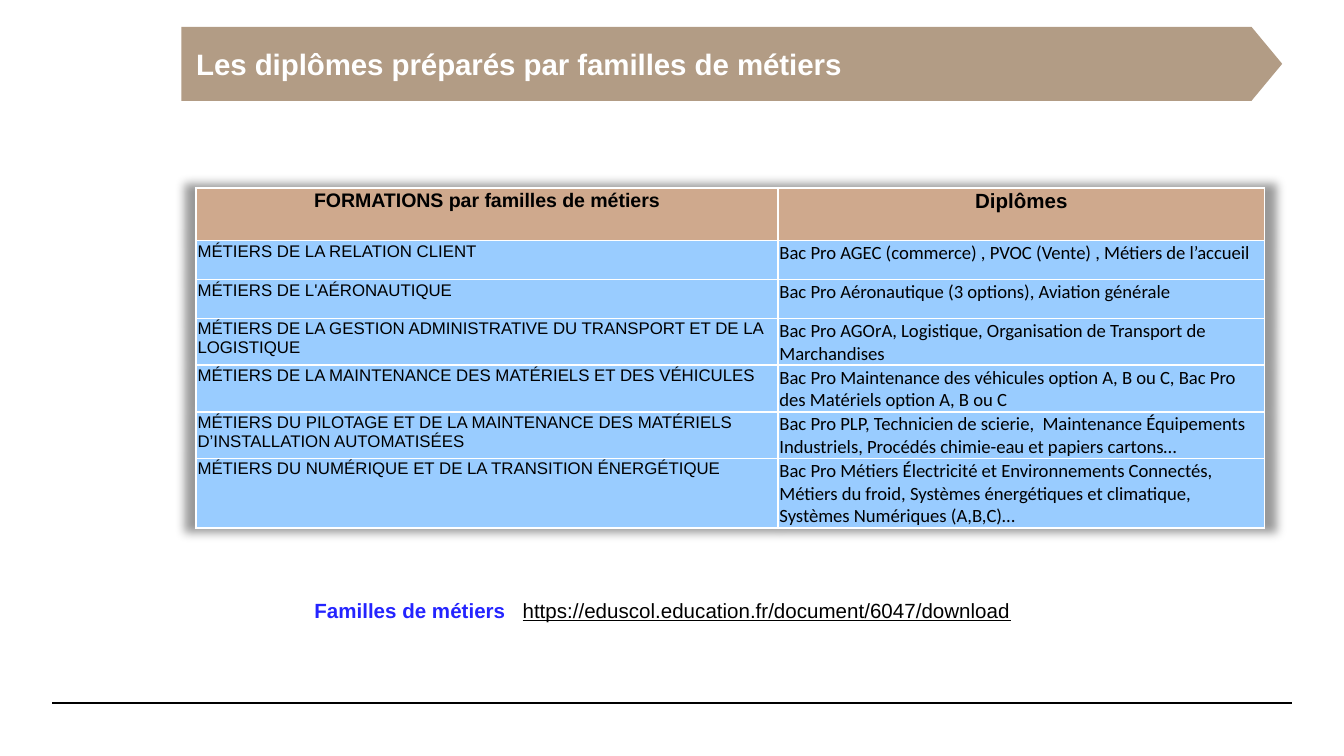
"""Build the slide listing the diplomas prepared by each family of trades."""
from typing import NamedTuple

from lxml import etree
from pptx import Presentation
from pptx.dml.color import RGBColor
from pptx.enum.shapes import MSO_CONNECTOR, MSO_SHAPE
from pptx.enum.text import MSO_ANCHOR, MSO_AUTO_SIZE, PP_ALIGN
from pptx.oxml import parse_xml
from pptx.oxml.ns import nsdecls, qn
from pptx.util import Inches, Pt

HOME_PLATE = MSO_SHAPE.PENTAGON
STRAIGHT = MSO_CONNECTOR.STRAIGHT
MIDDLE, TOP = MSO_ANCHOR.MIDDLE, MSO_ANCHOR.TOP
LEFT, CENTER = PP_ALIGN.LEFT, PP_ALIGN.CENTER
NO_FIT, GROW = MSO_AUTO_SIZE.NONE, MSO_AUTO_SIZE.SHAPE_TO_FIT_TEXT

BLACK, WHITE = "000000", "FFFFFF"
BANNER_BROWN, HEADER_TAN = "B29C85", "CFA98D"
ROW_BLUE, LABEL_BLUE = "99CCFF", "2424FF"
BANNER_BOX = [Inches(n) for n in (1.35, 0.2, 8.19, 0.55)]
COLUMN_WIDTHS = (4.33, 3.62)
HEADER_HEIGHT, ROW_HEIGHT = 0.39, 0.29


class Style(NamedTuple):
    size: float
    name: str = "Arial"
    color: str = BLACK
    bold: bool = False
    underline: bool = False


class Family(NamedTuple):
    trades: str
    diplomas: str


HEADER = Family("FORMATIONS par familles de métiers", "Diplômes")
HEADER_STYLES = (Style(10.5, bold=True), Style(11, bold=True))
ROW_STYLES = (Style(9), Style(10, "Calibri"))
FAMILIES = [
    Family("MÉTIERS DE LA RELATION CLIENT",
           "Bac Pro AGEC (commerce) , PVOC (Vente) , Métiers de l’accueil"),
    Family("MÉTIERS DE L'AÉRONAUTIQUE",
           "Bac Pro Aéronautique (3 options), Aviation générale"),
    Family("MÉTIERS DE LA GESTION ADMINISTRATIVE DU TRANSPORT ET DE LA LOGISTIQUE",
           "Bac Pro AGOrA, Logistique, Organisation de Transport de Marchandises"),
    Family("MÉTIERS DE LA MAINTENANCE DES MATÉRIELS ET DES VÉHICULES",
           "Bac Pro Maintenance des véhicules option A, B ou C, "
           "Bac Pro des Matériels option A, B ou C"),
    Family("MÉTIERS DU PILOTAGE ET DE LA MAINTENANCE DES MATÉRIELS "
           "D’INSTALLATION AUTOMATISÉES",
           "Bac Pro PLP, Technicien de scierie,  Maintenance Équipements "
           "Industriels, Procédés chimie-eau et papiers cartons…"),
    Family("MÉTIERS DU NUMÉRIQUE ET DE LA TRANSITION ÉNERGÉTIQUE",
           "Bac Pro Métiers Électricité et Environnements Connectés, Métiers du "
           "froid, Systèmes énergétiques et climatique, Systèmes Numériques (A,B,C)…"),
]


def rgb(value: str) -> RGBColor:
    return RGBColor.from_string(value)


def apply(target, formats: dict) -> None:
    for attribute, value in formats.items():
        setattr(target, attribute, value)


def write(paragraph, text: str, style: Style) -> None:
    run = paragraph.add_run()
    run.text = text
    formats = style._asdict() | {"size": Pt(style.size)}
    run.font.color.rgb = rgb(formats.pop("color"))
    apply(run.font, formats)


def draw_rule(slide) -> None:
    rule = slide.shapes.add_connector(
        STRAIGHT, Inches(0.39), Inches(5.23), Inches(9.61), Inches(5.23))
    rule.line.color.rgb = rgb(BLACK)
    rule.line.width = Pt(0.8)
    etree.SubElement(rule.element.spPr, qn("a:effectLst"))


def fill_cell(cell, text: str, style: Style, fill: str, align: PP_ALIGN) -> None:
    apply(cell, {"margin_left": Inches(0.01), "margin_right": Inches(0.01),
                 "margin_top": Inches(0.01), "margin_bottom": 0,
                 "vertical_anchor": TOP})
    entry = cell.text_frame.paragraphs[0]
    entry.alignment = align
    write(entry, text, style)
    borders = cell._tc.get_or_add_tcPr()
    for side in ("lnL", "lnR", "lnT", "lnB"):
        borders.append(parse_xml(
            f'<a:{side} {nsdecls("a")} w="{Pt(1)}"><a:solidFill>'
            f'<a:srgbClr val="{WHITE}"/></a:solidFill></a:{side}>'))
    cell.fill.solid()
    cell.fill.fore_color.rgb = rgb(fill)


def draw_table(slide) -> None:
    height = HEADER_HEIGHT + ROW_HEIGHT * len(FAMILIES)
    holder = slide.shapes.add_table(
        len(FAMILIES) + 1, len(COLUMN_WIDTHS), Inches(1.46), Inches(1.4),
        Inches(sum(COLUMN_WIDTHS)), Inches(height))
    table = holder.table
    table.first_row = table.horz_banding = False
    holder.element.find(".//" + qn("a:tblPr")).insert(0, parse_xml(
        f'<a:effectLst {nsdecls("a")}><a:outerShdw blurRad="63500" sx="102000" '
        f'sy="102000" algn="ctr" rotWithShape="0"><a:srgbClr val="{BLACK}">'
        '<a:alpha val="40000"/></a:srgbClr></a:outerShdw></a:effectLst>'))
    for column, width in zip(table.columns, COLUMN_WIDTHS):
        column.width = Inches(width)
    for index, family in enumerate([HEADER, *FAMILIES]):
        is_header = index == 0
        table.rows[index].height = Inches(HEADER_HEIGHT if is_header else ROW_HEIGHT)
        styles = HEADER_STYLES if is_header else ROW_STYLES
        fill, align = (HEADER_TAN, CENTER) if is_header else (ROW_BLUE, LEFT)
        for column, (text, style) in enumerate(zip(family, styles)):
            fill_cell(table.cell(index, column), text, style, fill, align)


def draw_banner(slide) -> None:
    banner = slide.shapes.add_shape(HOME_PLATE, *BANNER_BOX)
    banner.adjustments[0] = 0.415
    banner.shadow.inherit = False
    banner.fill.solid()
    banner.fill.fore_color.rgb = rgb(BANNER_BROWN)
    banner.line.fill.background()
    title = slide.shapes.title
    apply(title, dict(zip(("left", "top", "width", "height"), BANNER_BOX)))
    apply(title.text_frame, {"word_wrap": True, "auto_size": NO_FIT,
                             "vertical_anchor": MIDDLE,
                             "margin_left": Inches(0.11),
                             "margin_right": Inches(0.11)})
    heading = title.text_frame.paragraphs[0]
    heading.alignment = LEFT
    write(heading, "Les diplômes préparés par familles de métiers",
          Style(15.75, color=WHITE, bold=True))
    title.element.getparent().append(title.element)


def draw_source(slide) -> None:
    source = slide.shapes.add_textbox(
        Inches(2.24), Inches(4.4), Inches(7.01), Inches(0.29))
    apply(source.text_frame, {"word_wrap": True, "auto_size": GROW})
    line = source.text_frame.paragraphs[0]
    line.alignment = LEFT
    source.element.find(".//" + qn("a:pPr")).append(parse_xml(
        f'<a:tabLst {nsdecls("a")}><a:tab pos="{Inches(1.55)}" algn="l"/></a:tabLst>'))
    write(line, "Familles de métiers\t", Style(11, color=LABEL_BLUE, bold=True))
    write(line, "https://eduscol.education.fr/document/6047/download",
          Style(11, underline=True))


def main() -> None:
    deck = Presentation()
    deck.slide_width, deck.slide_height = Inches(10), Inches(5.625)
    slide = deck.slides.add_slide(deck.slide_layouts.get_by_name("Title Only"))
    draw_rule(slide)
    draw_table(slide)
    draw_banner(slide)
    draw_source(slide)
    deck.save("out.pptx")


if __name__ == "__main__":
    main()
